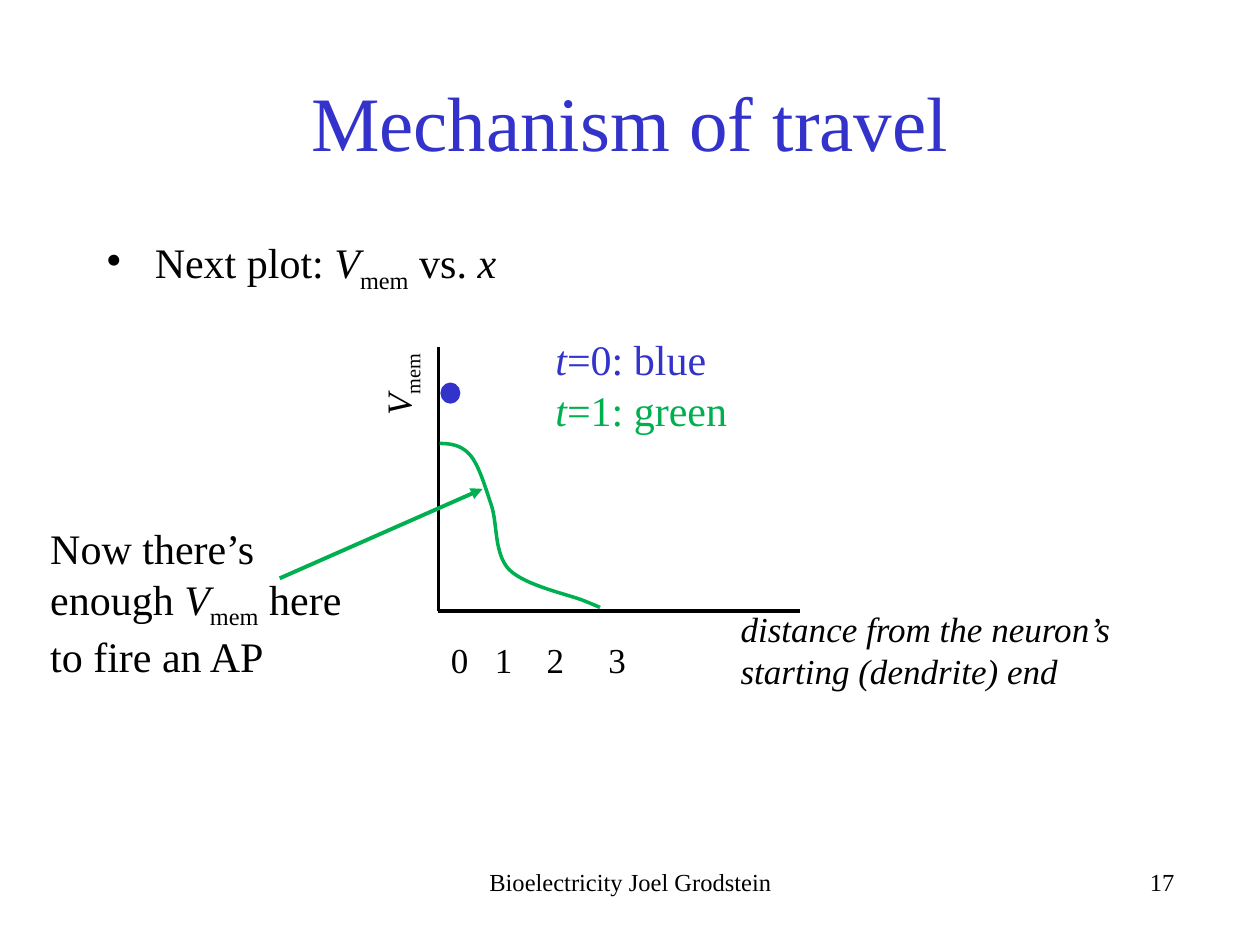
import pptx
import pptx.dml.color
import pptx.enum.shapes
import pptx.enum.text
import pptx.oxml
import pptx.oxml.ns
import pptx.util
from pptx.util import Inches

BLACK = pptx.dml.color.RGBColor(0x00, 0x00, 0x00)
BLUE = pptx.dml.color.RGBColor(0x33, 0x33, 0xCC)
GREEN = pptx.dml.color.RGBColor(0x00, 0xB0, 0x50)
FONT = "Times New Roman"
ALIGN = pptx.enum.text.PP_ALIGN
V_MEM = [("V", "italic"), ("mem", "sub")]


def add_xml(parent, tag, **attributes):
    """Append a DrawingML child element and return it."""
    child = pptx.oxml.parse_xml(f"<a:{tag} {pptx.oxml.ns.nsdecls('a')}/>")
    for name, value in attributes.items():
        child.set(name, str(value))
    parent.append(child)
    return child


def write_runs(paragraph, parts, size, color):
    """Fill a paragraph with (text, style) parts in one size and colour."""
    for text, style in parts:
        run = paragraph.add_run()
        run.text = text
        run.font.name = FONT
        run.font.size = pptx.util.Pt(size)
        run.font.color.rgb = color
        run.font.italic = style == "italic"
        if style == "sub":
            run.font._element.set("baseline", "-25000")


def add_text(slide, box, parts, size, color=BLACK, align=ALIGN.LEFT):
    """Add a wrapping text box with one styled paragraph and return its frame."""
    frame = slide.shapes.add_textbox(*map(Inches, box)).text_frame
    frame.word_wrap = True
    frame.paragraphs[0].alignment = align
    write_runs(frame.paragraphs[0], parts, size, color)
    return frame


def add_line(slide, start, end, color, arrow=False):
    """Draw a straight line, optionally with an arrowhead at its end."""
    line = slide.shapes.add_connector(
        pptx.enum.shapes.MSO_CONNECTOR.STRAIGHT, *map(Inches, (*start, *end)))
    line.line.color.rgb = color
    line.line.width = pptx.util.Pt(2.25)
    if arrow:
        add_xml(line.line._get_or_add_ln(), "tailEnd", type="triangle")
    add_xml(line._element.spPr, "effectLst")


def bezier_points(start, segments, steps=16):
    """Return points along a chain of cubic Bezier segments."""
    points = [start]
    for control_1, control_2, end in segments:
        for step in range(1, steps + 1):
            t = step / steps
            u = 1 - t
            points.append(tuple(
                u**3 * a + 3 * u**2 * t * b + 3 * u * t**2 * c + t**3 * d
                for a, b, c, d in zip(start, control_1, control_2, end)))
        start = end
    return points


def add_title(slide, box):
    """Place and format the slide title."""
    title = slide.shapes.title
    title.left, title.top, title.width, title.height = map(Inches, box)
    title.text_frame.text = "Mechanism of travel"
    title.text_frame.vertical_anchor = pptx.enum.text.MSO_ANCHOR.MIDDLE
    paragraph = title.text_frame.paragraphs[0]
    paragraph.alignment = ALIGN.CENTER
    font = paragraph.runs[0].font
    font.name, font.size = FONT, pptx.util.Pt(44)
    font.color.rgb = BLUE


def add_bullet(slide, box):
    """Add the bulleted line that introduces the plot."""
    parts = [("Next plot: ", ""), *V_MEM, (" vs. ", ""), ("x", "italic")]
    paragraph = add_text(slide, box, parts, 24).paragraphs[0]
    paragraph.space_before = pptx.util.Pt(4.8)
    properties = paragraph._p.get_or_add_pPr()
    properties.set("marL", str(Inches(0.38)))
    properties.set("indent", str(-Inches(0.38)))
    add_xml(properties, "buChar", char="•")


def add_curve(slide, left, top):
    """Draw the green curve of voltage falling with distance."""
    segments = [
        ((0.08, 0), (0.17, 0.01), (0.24, 0.09)),
        ((0.31, 0.17), (0.36, 0.34), (0.41, 0.49)),
        ((0.46, 0.64), (0.43, 0.87), (0.55, 1)),
        ((0.68, 1.13), (1.03, 1.2), (1.15, 1.25)),
        ((1.27, 1.3), (1.27, 1.3), (1.27, 1.3)),
    ]
    points = [(Inches(left + x), Inches(top + y))
              for x, y in bezier_points((0, 0), segments)]
    builder = slide.shapes.build_freeform(*points[0])
    builder.add_line_segments(points[1:], close=False)
    curve = builder.convert_to_shape()
    curve.shadow.inherit = False
    curve.fill.background()
    curve.line.color.rgb = GREEN
    curve.line.width = pptx.util.Pt(2)


def add_plot(slide, box):
    """Draw the axes, their labels, the t=0 point, the t=1 curve and the key."""
    left, top, width, height = box
    bottom = top + height
    add_line(slide, (left, top), (left, bottom), BLACK)
    add_line(slide, (left + width, bottom), (left, bottom), BLACK)

    point = slide.shapes.add_shape(
        pptx.enum.shapes.MSO_SHAPE.OVAL,
        *map(Inches, (left + 0.03, top + 0.3, 0.13, 0.14)))
    point.shadow.inherit = False
    point.fill.solid()
    point.fill.fore_color.rgb = BLUE
    point.line.color.rgb = BLUE
    point.line.width = pptx.util.Pt(2)
    add_curve(slide, left + 0.01, top + 0.77)

    key = add_text(slide, (left + 0.83, top - 0.15, 1.76, 0.91),
                   [("t", "italic"), ("=0: blue", "")], 24, BLUE)
    write_runs(key.add_paragraph(), [("t", "italic"), ("=1: green", "")], 24, GREEN)

    ticks = add_text(slide, (left, bottom + 0.17, 1.77, 0.44), [("0\t1\t2\t3", "")], 20)
    stops = add_xml(ticks.paragraphs[0]._p.get_or_add_pPr(), "tabLst")
    for position in (0.35, 0.76, 1.25):
        add_xml(stops, "tab", pos=Inches(position), algn="l")

    voltage = add_text(slide, (left - 0.54, top - 0.8, 0.54, 1.45), V_MEM, 20)
    voltage._txBody.bodyPr.set("vert", "vert270")
    add_text(slide, (left + 2.3, bottom - 0.08, 3.36, 0.77),
             [("distance from the neuron’s starting (dendrite) end", "italic")], 20)


def add_callout(slide, box, target):
    """Add the remark beside the plot and its arrow to the curve."""
    parts = [("Now there’s enough ", ""), *V_MEM, (" here to fire an AP", "")]
    add_text(slide, box, parts, 24)
    add_line(slide, (box[0] + 1.92, box[1] + 0.49), target, GREEN, arrow=True)


def add_footer(slide, box):
    """Add the centred course name and the slide number at the right."""
    left, top, width, height = box
    add_text(slide, (left, top, 3.17, height),
             [("Bioelectricity Joel Grodstein", "")], 14, align=ALIGN.CENTER)
    add_text(slide, (left + width - 3.17, top, 3.17, height),
             [("17", "")], 14, align=ALIGN.RIGHT)


def main():
    """Build the slide and save it."""
    deck = pptx.Presentation()
    deck.slide_width, deck.slide_height = Inches(10), Inches(7.5)
    slide = deck.slides.add_slide(deck.slide_layouts.get_by_name("Title Only"))
    add_title(slide, (0.75, 0.33, 8.5, 1.25))
    add_bullet(slide, (0.75, 1.83, 8.79, 2.16))
    add_plot(slide, (3.48, 2.75, 2.87, 2.1))
    add_callout(slide, (0.3, 4.1, 2.62, 1.31), (3.83, 3.88))
    add_footer(slide, (3.42, 6.83, 6, 0.34))
    deck.save("out.pptx")


if __name__ == "__main__":
    main()
